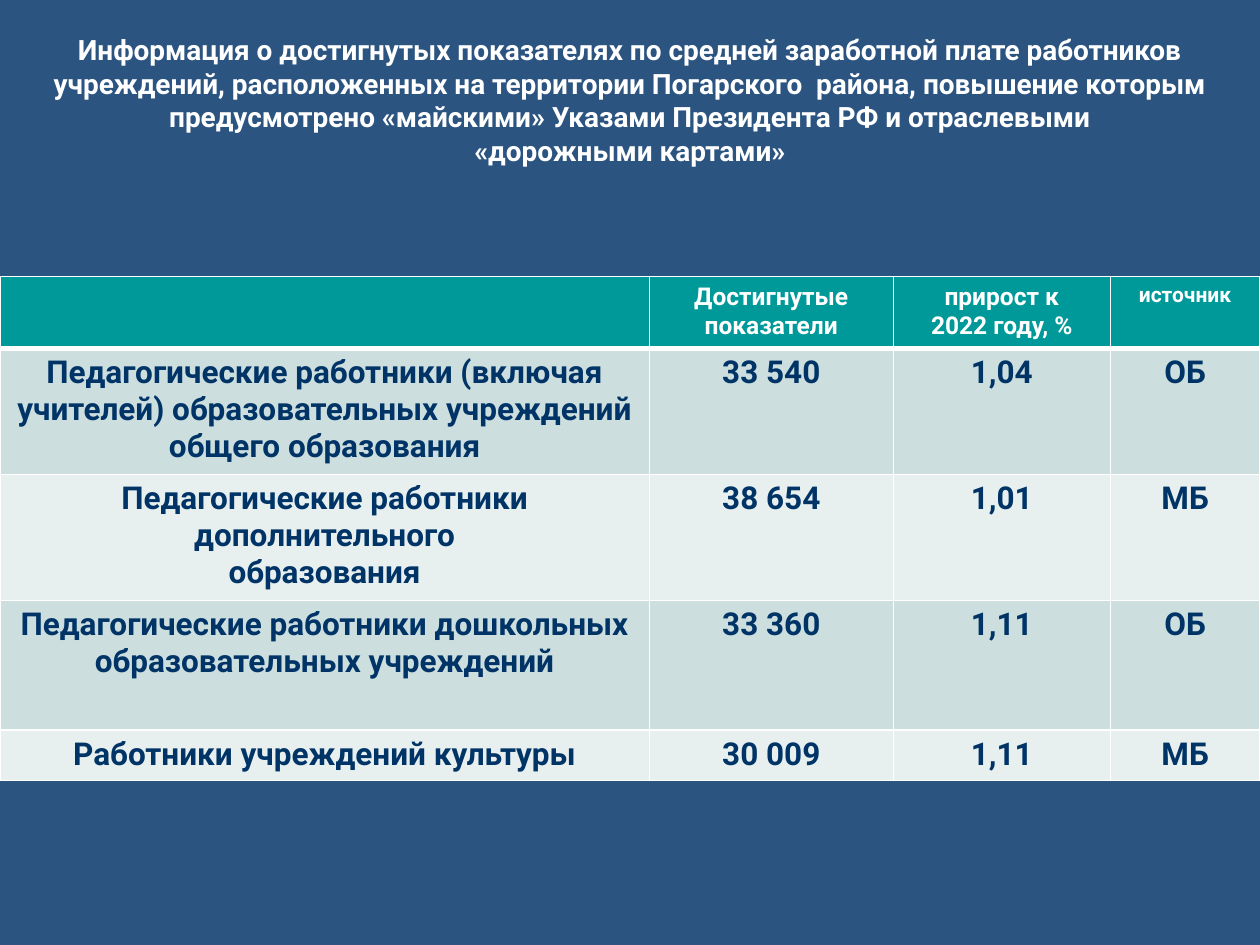
import pptx
import pptx.util
import pptx.dml.color
import pptx.enum.text
import pptx.oxml.ns
from lxml import etree

Pt = pptx.util.Pt
FONT = "Roboto"
COLORS = {
    "background": "2B5481",
    "white": "FFFFFF",
    "header": "009999",
    "band_dark": "CCDEDE",
    "band_light": "E7EFEF",
    "body": "003366",
}
TITLE = [
    "Информация о достигнутых показателях по средней заработной плате работников",
    "учреждений, расположенных на территории Погарского  района, повышение которым "
    "предусмотрено «майскими» Указами Президента РФ и отраслевыми",
    "«дорожными картами»",
]
ROWS = [
    ["", "Достигнутые показатели", "прирост к\n2022 году, %", "источник"],
    ["Педагогические работники (включая учителей) образовательных учреждений "
     "общего образования", "33 540", "1,04", "ОБ"],
    ["Педагогические работники дополнительного\nобразования", "38 654", "1,01", "МБ"],
    ["Педагогические работники дошкольных\nобразовательных учреждений",
     "33 360", "1,11", "ОБ"],
    ["Работники учреждений культуры", "30 009", "1,11", "МБ"],
]
COL_WIDTHS = [371, 139.5, 124, 85.5]
ROW_HEIGHTS = [41, 72, 72, 74, 29]
HEADER_SIZES = [14, 14, 14, 12]


def rgb(name):
    return pptx.dml.color.RGBColor.from_string(COLORS[name])


def write(tf, text, size, color):
    tf.text = text
    for p in tf.paragraphs:
        p.alignment = pptx.enum.text.PP_ALIGN.CENTER
        for r in p.runs:
            r.font.name = FONT
            r.font.size = Pt(size)
            r.font.bold = True
            r.font.color.rgb = rgb(color)


def set_borders(cell, bottom=1, top=1):
    """Draw white cell borders; they must precede the fill in tcPr."""
    qn = pptx.oxml.ns.qn
    tc_pr = cell._tc.get_or_add_tcPr()
    widths = {"a:lnL": 1, "a:lnR": 1, "a:lnT": top, "a:lnB": bottom}
    for i, (tag, width) in enumerate(widths.items()):
        ln = etree.Element(qn(tag), w=str(Pt(width)))
        fill = etree.SubElement(ln, qn("a:solidFill"))
        etree.SubElement(fill, qn("a:srgbClr"), val=COLORS["white"])
        tc_pr.insert(i, ln)


def add_title(s, left, top, width, height):
    tf = s.shapes.add_textbox(Pt(left), Pt(top), Pt(width), Pt(height)).text_frame
    tf.word_wrap = True
    write(tf, "\n".join(TITLE), 16, "white")


def add_pay_table(s, left, top, width, height):
    table = s.shapes.add_table(len(ROWS), len(COL_WIDTHS), Pt(left), Pt(top),
                               Pt(width), Pt(height)).table
    for column, share in zip(table.columns, COL_WIDTHS):
        column.width = Pt(width * share / sum(COL_WIDTHS))
    for row, share in zip(table.rows, ROW_HEIGHTS):
        row.height = Pt(height * share / sum(ROW_HEIGHTS))

    for i, texts in enumerate(ROWS):
        for j, text in enumerate(texts):
            cell = table.cell(i, j)
            if i == 0:
                fill, color, size = "header", "white", HEADER_SIZES[j]
            else:
                fill = "band_dark" if i % 2 else "band_light"
                color, size = "body", 18
            write(cell.text_frame, text, size, color)
            cell.fill.solid()
            cell.fill.fore_color.rgb = rgb(fill)
            # Heavy rule between the header and the body
            set_borders(cell, bottom=3 if i == 0 else 1, top=3 if i == 1 else 1)


def main():
    prs = pptx.Presentation()
    prs.slide_width, prs.slide_height = Pt(720), Pt(540)
    s = prs.slides.add_slide(prs.slide_layouts[6])
    s.background.fill.solid()
    s.background.fill.fore_color.rgb = rgb("background")
    add_title(s, 0, 15, 720, 85)
    add_pay_table(s, 0, 158, 720, 288)
    prs.save("out.pptx")


if __name__ == "__main__":
    main()
